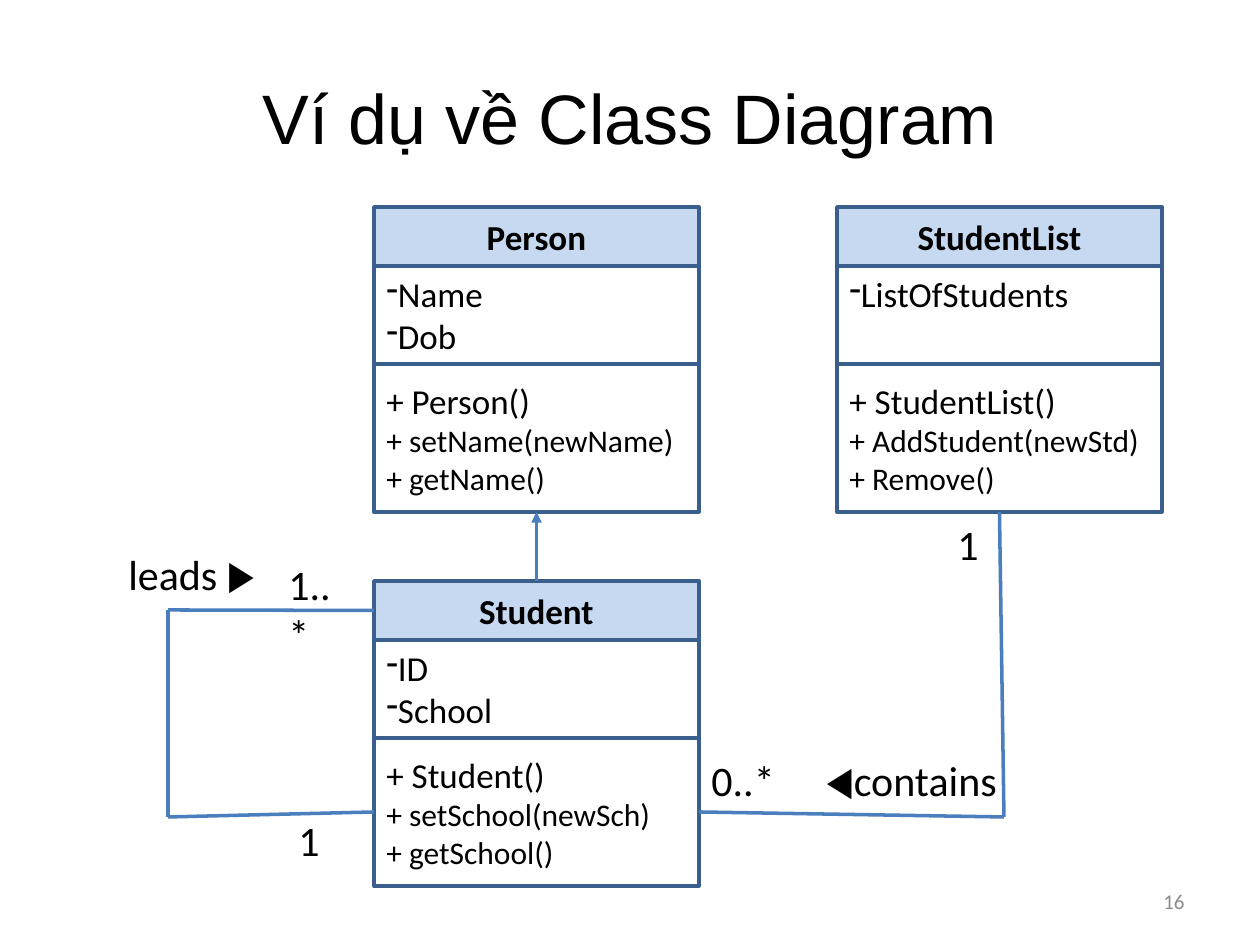
"""Build a slide with a class diagram of Person, Student and StudentList."""
from lxml import etree
from pptx import Presentation
from pptx import util as u
from pptx.dml.color import RGBColor
from pptx.enum import shapes, text
from pptx.oxml.ns import qn

PX = u.Inches(10) / 1260
BLACK = RGBColor(0x00, 0x00, 0x00)
GREY = RGBColor(0x8C, 0x8C, 0x8C)
WHITE = RGBColor(0xFF, 0xFF, 0xFF)
PALE_BLUE = RGBColor(0xC6, 0xD9, 0xF1)
BORDER = RGBColor(0x3A, 0x5F, 0x8C)
LINK = RGBColor(0x4B, 0x7E, 0xBC)
TOP, LEFT, BOTTOM, RIGHT = range(4)
MIDDLE = text.MSO_ANCHOR.MIDDLE


def px(*lengths):
    return [round(length * PX) for length in lengths]


def write(paragraph, words, size=24, font="Calibri", color=BLACK, bold=False,
          align=text.PP_ALIGN.LEFT):
    paragraph.alignment = align
    run = paragraph.add_run()
    run.text = words
    run.font.size = u.Pt(size)
    run.font.name = font
    run.font.bold = bold
    run.font.color.rgb = color


deck = Presentation()
deck.slide_width, deck.slide_height = px(1260, 945)
slide = deck.slides.add_slide(deck.slide_layouts[5])

title = slide.shapes.title
title.left, title.top, title.width, title.height = px(63, 38, 1134, 157)
title.text_frame.vertical_anchor = MIDDLE
write(title.text_frame.paragraphs[0], "Ví dụ về Class Diagram", size=40,
      font="Arial", align=text.PP_ALIGN.CENTER)

page_number = slide.shapes.add_textbox(*px(903, 876, 294, 50)).text_frame
page_number.vertical_anchor = MIDDLE
write(page_number.paragraphs[0], "16", size=12, color=GREY,
      align=text.PP_ALIGN.RIGHT)

classes = [
    ("Person", 374, 207, ["Name", "Dob"],
     ["+ Person()", "+ setName(newName)", "+ getName()"]),
    ("Student", 374, 581, ["ID", "School"],
     ["+ Student()", "+ setSchool(newSch)", "+ getSchool()"]),
    ("StudentList", 837, 207, ["ListOfStudents"],
     ["+ StudentList()", "+ AddStudent(newStd)", "+ Remove()"]),
]
headings, operations = {}, {}
for class_name, left, top, attributes, methods in classes:
    group = slide.shapes.add_group_shape()
    compartments = []
    for offset, height, fill in ((0, 59, PALE_BLUE), (59, 98, WHITE),
                                 (157, 148, WHITE)):
        compartment = group.shapes.add_shape(
            shapes.MSO_SHAPE.RECTANGLE, *px(left, top + offset, 325, height))
        compartment.shadow.inherit = False
        compartment.fill.solid()
        compartment.fill.fore_color.rgb = fill
        compartment.line.color.rgb = BORDER
        compartment.line.width = u.Pt(2)
        compartment.text_frame.word_wrap = True
        compartment.text_frame.vertical_anchor = MIDDLE
        compartments.append(compartment)
    heading, fields, operation = compartments
    headings[class_name], operations[class_name] = heading, operation

    write(heading.text_frame.paragraphs[0], class_name, size=20, bold=True,
          align=text.PP_ALIGN.CENTER)
    fields.text_frame.vertical_anchor = text.MSO_ANCHOR.TOP
    for frame, lines in ((fields.text_frame, attributes),
                         (operation.text_frame, methods)):
        for index, line in enumerate(lines):
            paragraph = frame.paragraphs[0] if index == 0 else frame.add_paragraph()
            is_method = lines is methods
            write(paragraph, line, size=18 if is_method and index else 20)
            if not is_method:
                properties = paragraph._p.get_or_add_pPr()
                properties.set("marL", "0")
                properties.set("indent", "0")
                etree.SubElement(properties, qn("a:buFontTx"))
                etree.SubElement(properties, qn("a:buChar")).set("char", "-")

contains_corner = (1004, 817)
leads_top, leads_bottom = (168, 610), (168, 817)
links = [
    ((headings["Student"], TOP), (operations["Person"], BOTTOM), True),
    ((operations["Student"], RIGHT), contains_corner, False),
    ((operations["StudentList"], BOTTOM), contains_corner, False),
    ((headings["Student"], LEFT), leads_top, False),
    (leads_top, leads_bottom, False),
    ((operations["Student"], LEFT), leads_bottom, False),
]
for start, end, inherits in links:
    fixed = [point if isinstance(point[0], int) else (0, 0)
             for point in (start, end)]
    link = slide.shapes.add_connector(shapes.MSO_CONNECTOR.STRAIGHT,
                                      *px(*fixed[0], *fixed[1]))
    if not isinstance(start[0], int):
        link.begin_connect(*start)
    if not isinstance(end[0], int):
        link.end_connect(*end)
    link.line.color.rgb = LINK
    link.line.width = u.Pt(2)
    if inherits:
        etree.SubElement(link.line._get_or_add_ln(),
                         qn("a:tailEnd")).set("type", "triangle")
    etree.SubElement(link._element.spPr, qn("a:effectLst"))

labels = [
    (945, 512, 98, [("1", "Calibri")]),
    (699, 748, 98, [("0..*", "Calibri")]),
    (808, 748, 207, [("◀", "Courier New"), ("contains", "Calibri")]),
    (286, 808, 79, [("1", "Calibri")]),
    (276, 552, 88, [("1..*", "Calibri")]),
    (88, 542, 207, [("leads ", "Calibri"), ("▶", "Courier New")]),
]
for left, top, width, parts in labels:
    label = slide.shapes.add_textbox(*px(left, top, width, 63)).text_frame
    label.word_wrap = True
    align = text.PP_ALIGN.CENTER if len(parts) > 1 else text.PP_ALIGN.LEFT
    for words, font in parts:
        write(label.paragraphs[0], words, font=font, align=align)

deck.save("out.pptx")
